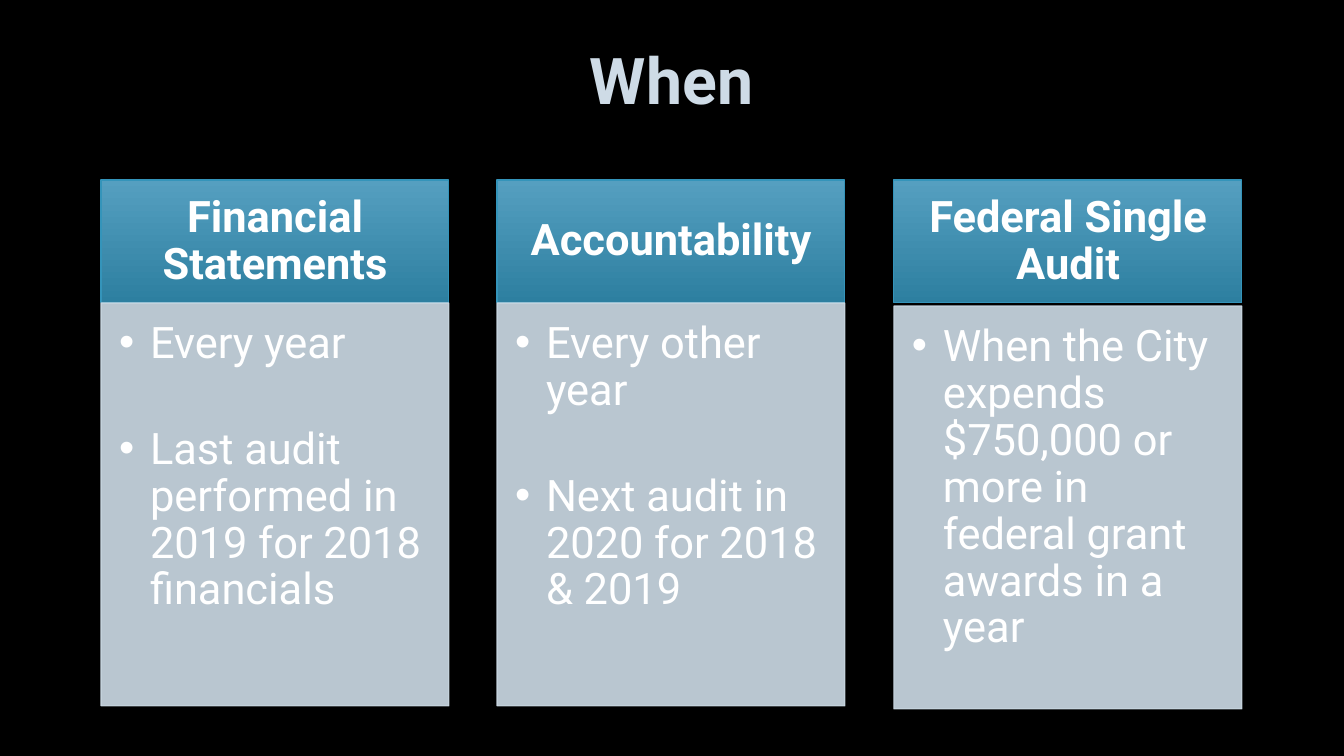
from lxml import etree
from pptx import Presentation
from pptx.dml.color import RGBColor
from pptx.enum.shapes import MSO_SHAPE
from pptx.enum.text import MSO_ANCHOR, MSO_AUTO_SIZE, PP_ALIGN
from pptx.oxml.ns import qn
from pptx.util import Pt

RECT = MSO_SHAPE.RECTANGLE
TOP, MIDDLE = MSO_ANCHOR.TOP, MSO_ANCHOR.MIDDLE
LEFT, CENTER = PP_ALIGN.LEFT, PP_ALIGN.CENTER
NO_FIT = MSO_AUTO_SIZE.NONE
SIDES = ("left", "top", "right", "bottom")
COLORS = {
    "background": "000000", "title": "CEDBE6", "text": "FFFFFF",
    "header_top": "559FC0", "header_bottom": "2D7FA0", "header_line": "3494BA",
    "body": "CEDCE7",
}
COLUMNS = [
    ("Financial Statements", 303,
     ["Every year", "Last audit performed in 2019 for 2018 financials"]),
    ("Accountability", 303,
     ["Every other year", "Next audit in 2020 for 2018 & 2019"]),
    ("Federal Single Audit", 306,
     ["When the City expends $750,000 or more in federal grant awards in a year"]),
]


class Deck:
    """Holds the style and the current slide, and draws its elements."""

    font = "Roboto"
    scale = 914400 / 100.8

    def __init__(self, width, height):
        self.prs = Presentation()
        self.prs.slide_width = self.px(width)
        self.prs.slide_height = self.px(height)
        self.s = self.prs.slides.add_slide(self.prs.slide_layouts[5])
        fill = self.s.background.fill
        fill.solid()
        fill.fore_color.rgb = self.color("background")

    def px(self, n):
        return round(n * self.scale)

    def color(self, name):
        return RGBColor.from_string(COLORS[name])

    def text(self, sp, texts, size, color, bold=False, align=CENTER,
             anchor=MIDDLE, insets=(10, 5, 10, 5), bullet=False, gap=0):
        tf = sp.text_frame
        frame = {"word_wrap": True, "auto_size": NO_FIT, "vertical_anchor": anchor}
        frame.update((f"margin_{side}", self.px(n)) for side, n in zip(SIDES, insets))
        for key, value in frame.items():
            setattr(tf, key, value)
        for i, text in enumerate(texts):
            p = tf.add_paragraph() if i else tf.paragraphs[0]
            if bullet:
                self.bullet(p)
            layout = {"alignment": align, "line_spacing": 0.9,
                      "space_before": Pt(gap if i else 0), "space_after": Pt(0)}
            for key, value in layout.items():
                setattr(p, key, value)
            r = p.add_run()
            r.text = text
            style = {"name": self.font, "size": Pt(size), "bold": bold}
            for key, value in style.items():
                setattr(r.font, key, value)
            r.font.color.rgb = self.color(color)

    def bullet(self, p):
        pPr = p._p.get_or_add_pPr()
        pPr.set("marL", str(self.px(31)))
        pPr.set("indent", str(-self.px(31)))
        etree.SubElement(pPr, qn("a:buFont")).set("typeface", "Arial")
        etree.SubElement(pPr, qn("a:buChar")).set("char", "•")

    def title(self, text, *box):
        sp = self.s.shapes.title
        for key, n in zip(("left", "top", "width", "height"), box):
            setattr(sp, key, self.px(n))
        self.text(sp, [text], 46, "title", bold=True)

    def rect(self, line, *box):
        sp = self.s.shapes.add_shape(RECT, *map(self.px, box))
        sp.shadow.inherit = False
        sp.line.color.rgb = self.color(line)
        sp.line.width = Pt(0.75)
        return sp

    def header(self, text, *box):
        sp = self.rect("header_line", *box)
        sp.fill.gradient()
        sp.fill.gradient_angle = 270
        for stop, name, place in zip(sp.fill.gradient_stops,
                                     ("header_top", "header_bottom"), (0, 1)):
            stop.color.rgb = self.color(name)
            stop.position = place
        self.text(sp, [text], 31, "text", bold=True, insets=(24, 14, 24, 14))

    def body(self, items, *box):
        sp = self.rect("body", *box)
        sp.fill.solid()
        sp.fill.fore_color.rgb = self.color("body")
        for clr in sp._element.spPr.iter(qn("a:srgbClr")):
            etree.SubElement(clr, qn("a:alpha")).set("val", "90000")
        self.text(sp, items, 31, "text", align=LEFT, anchor=TOP,
                  insets=(18, 18, 24, 27), bullet=True, gap=42)


def main():
    deck = Deck(1344, 756)
    deck.title("When", 101, 12, 1141, 143)
    for i, (heading, body_top, items) in enumerate(COLUMNS):
        left = 101 + 793 * i // 2
        deck.header(heading, left, 180, 348, 123)
        deck.body(items, left, body_top, 348, 403)
    deck.prs.save("out.pptx")


if __name__ == "__main__":
    main()
